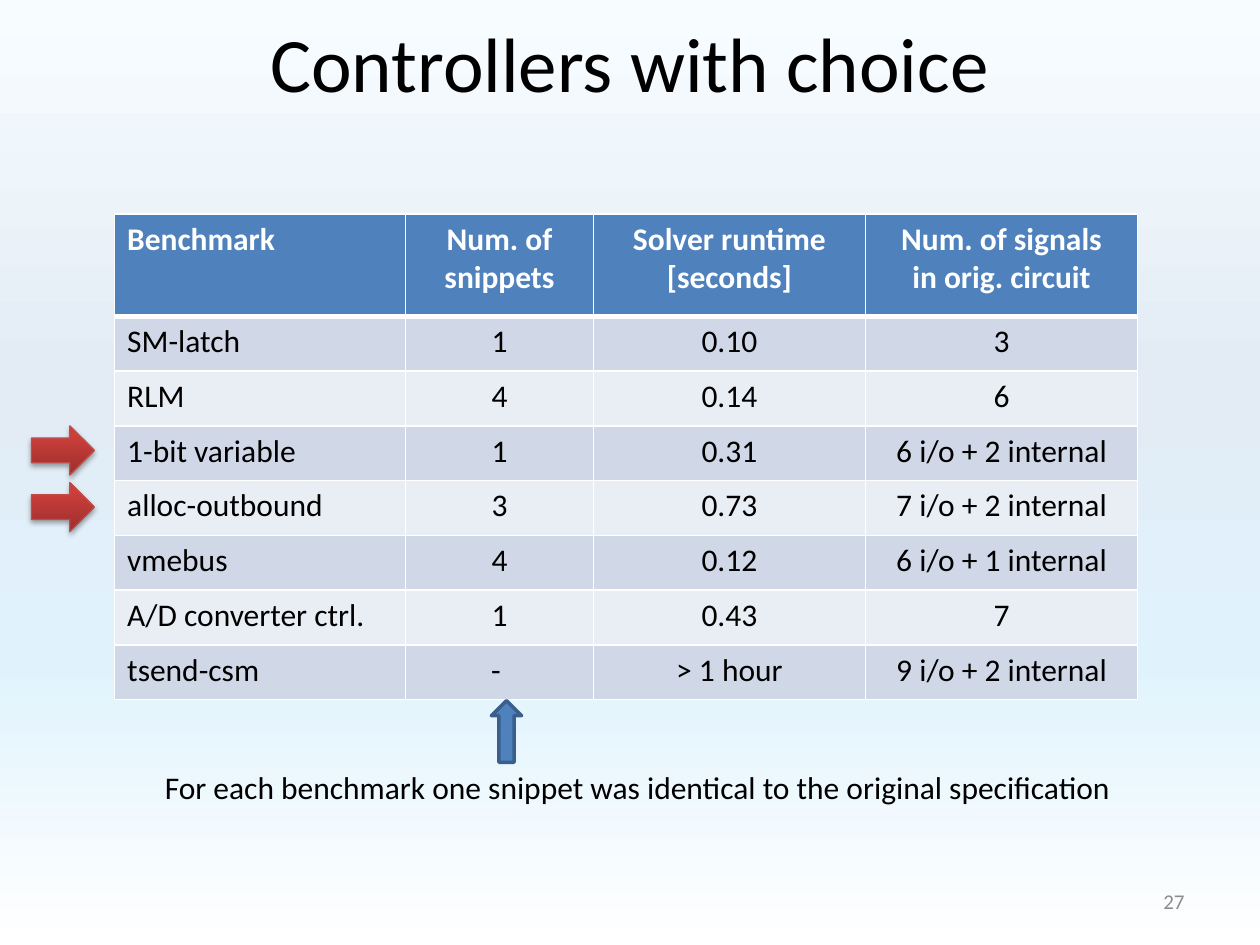
from lxml.etree import SubElement
from pptx import Presentation
from pptx.dml.color import RGBColor
from pptx.enum.shapes import MSO_SHAPE as Shape
from pptx.enum.text import MSO_ANCHOR as Anchor, PP_ALIGN as Align
from pptx.oxml import parse_xml
from pptx.oxml.ns import nsdecls, qn
from pptx.util import Inches, Pt


def add_text(paragraph, text, size, color, align=Align.LEFT, bold=False):
    paragraph.alignment = align
    run = paragraph.add_run()
    run.text = text
    run.font.name = "Calibri"
    run.font.size = Pt(size)
    run.font.bold = bold
    run.font.color.rgb = RGBColor.from_string(color)


def set_gradient(fill, element, stops, angle):
    fill.gradient()
    stop_list = element.find(".//" + qn("a:gsLst"))
    stop_list.clear()
    for position, color in stops:
        stop = SubElement(stop_list, qn("a:gs"), pos=str(position * 1000))
        SubElement(stop, qn("a:srgbClr"), val=color)
    element.find(".//" + qn("a:lin")).set("ang", str(angle * 60000))


presentation = Presentation()
presentation.slide_width = Inches(10)
presentation.slide_height = Inches(7.5)
slide = presentation.slides.add_slide(presentation.slide_layouts[5])
set_gradient(slide.background.fill, slide._element,
             [(0, "F7FDFF"), (40, "E3EBF5"), (70, "E0F3FC"), (100, "FFFFFF")], 90)

title = slide.shapes.title
title.left, title.top = Inches(0.5), Inches(0.06)
title.width, title.height = Inches(9), Inches(0.86)
title.text_frame.vertical_anchor = Anchor.MIDDLE
add_text(title.text_frame.paragraphs[0], "Controllers with choice", 44, "000000", Align.CENTER)

rows = [
    ["Benchmark", "Num. of snippets", "Solver runtime [seconds]", "Num. of signals\nin orig. circuit"],
    ["SM-latch", "1", "0.10", "3"],
    ["RLM", "4", "0.14", "6"],
    ["1-bit variable", "1", "0.31", "6 i/o + 2 internal"],
    ["alloc-outbound", "3", "0.73", "7 i/o + 2 internal"],
    ["vmebus", "4", "0.12", "6 i/o + 1 internal"],
    ["A/D converter ctrl.", "1", "0.43", "7"],
    ["tsend-csm", "- ", "> 1 hour", "9 i/o + 2 internal"],
]
column_widths = [2.31, 1.49, 2.16, 2.16]
table = slide.shapes.add_table(len(rows), len(column_widths), Inches(0.91), Inches(1.7),
                               Inches(8.11), Inches(3.86)).table
for column, width in zip(table.columns, column_widths):
    column.width = Inches(width)

for row_index, row in enumerate(rows):
    header = row_index == 0
    table.rows[row_index].height = Inches(0.81 if header else 0.435)
    fill_color = "4F81BD" if header else ("E9EDF4", "D0D8E8")[row_index % 2]
    for column_index, text in enumerate(row):
        cell = table.cell(row_index, column_index)
        for side in "LRTB":
            heavy = (header and side == "B") or (row_index == 1 and side == "T")
            cell._tc.get_or_add_tcPr().append(parse_xml(
                f'<a:ln{side} {nsdecls("a")} w="{Pt(3 if heavy else 1)}"><a:solidFill>'
                f'<a:srgbClr val="FFFFFF"/></a:solidFill></a:ln{side}>'))
        cell.fill.solid()
        cell.fill.fore_color.rgb = RGBColor.from_string(fill_color)
        for line_index, line in enumerate(text.split("\n")):
            frame = cell.text_frame
            paragraph = frame.add_paragraph() if line_index else frame.paragraphs[0]
            add_text(paragraph, line, 18, "FFFFFF" if header else "000000",
                     Align.CENTER if column_index else Align.LEFT, header)

number_box = slide.shapes.add_textbox(Inches(7.17), Inches(6.95), Inches(2.33), Inches(0.4))
number_box.text_frame.word_wrap = True
number_box.text_frame.vertical_anchor = Anchor.MIDDLE
add_text(number_box.text_frame.paragraphs[0], "27", 12, "8C8C8C", Align.RIGHT)

for top in (3.83, 3.38):
    row_arrow = slide.shapes.add_shape(Shape.RIGHT_ARROW, Inches(0.25), Inches(top),
                                       Inches(0.5), Inches(0.39))
    set_gradient(row_arrow.fill, row_arrow._element,
                 [(0, "9C2F2D"), (80, "CB3E3A"), (100, "CE3B37")], 270)
    row_arrow.line.color.rgb = RGBColor.from_string("BF4C48")
    row_arrow.line.width = Pt(0.75)
    row_arrow._element.spPr.append(parse_xml(
        f'<a:effectLst {nsdecls("a")}><a:outerShdw blurRad="{Pt(3.1)}" dist="{Pt(1.8)}" '
        'dir="5400000" rotWithShape="0"><a:srgbClr val="000000"><a:alpha val="35000"/>'
        '</a:srgbClr></a:outerShdw></a:effectLst>'))

note = slide.shapes.add_textbox(Inches(1.21), Inches(6.05), Inches(7.8), Inches(0.4))
note.text_frame.word_wrap = False
add_text(note.text_frame.paragraphs[0],
         "For each benchmark one snippet was identical to the original specification", 18, "000000")

note_arrow = slide.shapes.add_shape(Shape.UP_ARROW, Inches(3.9), Inches(5.56),
                                    Inches(0.24), Inches(0.49))
note_arrow.shadow.inherit = False
note_arrow.fill.solid()
note_arrow.fill.fore_color.rgb = RGBColor.from_string("4F81BD")
note_arrow.line.color.rgb = RGBColor.from_string("3A5F8C")
note_arrow.line.width = Pt(2)

presentation.save("out.pptx")
